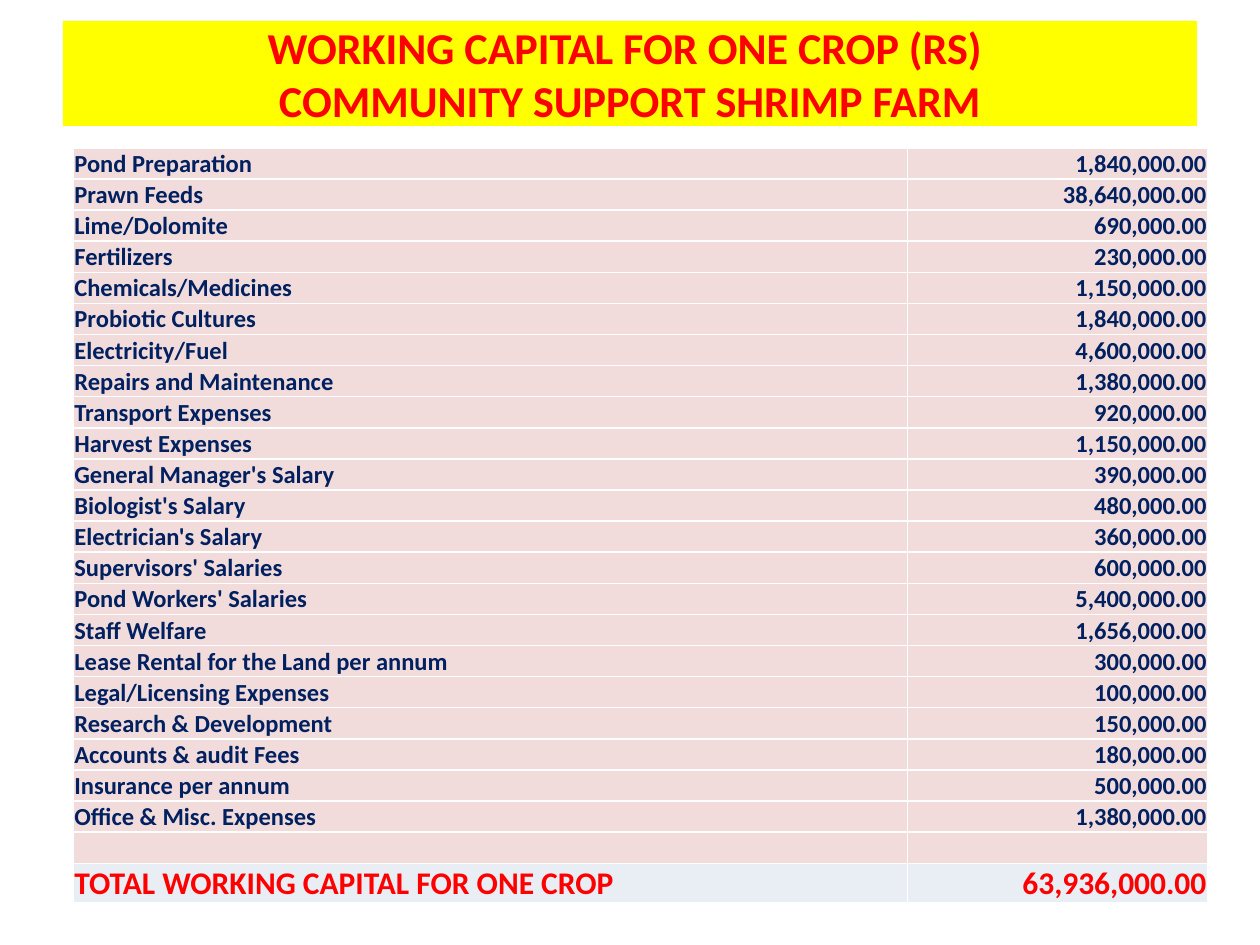
from lxml.etree import SubElement
from pptx import Presentation
from pptx.dml.color import RGBColor
from pptx.enum.shapes import MSO_SHAPE as Shape
from pptx.enum.text import MSO_ANCHOR as Anchor, PP_ALIGN as Align
from pptx.oxml.ns import qn
from pptx.util import Pt

NAVY, RED, YELLOW = "002060", "FF0000", "FFFF00"
PINK, PALE_BLUE, WHITE = "F2DCDB", "E9EDF4", "FFFFFF"
ROW_HEIGHT, TOTAL_HEIGHT = 17.8, 22.4
COLUMN_WIDTHS = (476.5, 171.5)

EXPENSES = [
    ("Pond Preparation", "1,840,000.00"),
    ("Prawn Feeds", "38,640,000.00"),
    ("Lime/Dolomite", "690,000.00"),
    ("Fertilizers", "230,000.00"),
    ("Chemicals/Medicines", "1,150,000.00"),
    ("Probiotic Cultures", "1,840,000.00"),
    ("Electricity/Fuel", "4,600,000.00"),
    ("Repairs and Maintenance", "1,380,000.00"),
    ("Transport Expenses", "920,000.00"),
    ("Harvest Expenses", "1,150,000.00"),
    ("General Manager's Salary", "390,000.00"),
    ("Biologist's Salary", "480,000.00"),
    ("Electrician's Salary", "360,000.00"),
    ("Supervisors' Salaries", "600,000.00"),
    ("Pond Workers' Salaries", "5,400,000.00"),
    ("Staff Welfare", "1,656,000.00"),
    ("Lease Rental for the Land per annum", "300,000.00"),
    ("Legal/Licensing Expenses", "100,000.00"),
    ("Research & Development", "150,000.00"),
    ("Accounts & audit Fees", "180,000.00"),
    ("Insurance per annum", "500,000.00"),
    ("Office & Misc. Expenses", "1,380,000.00"),
]
TOTAL = ("TOTAL WORKING CAPITAL FOR ONE CROP", "63,936,000.00")


def set_fill(item, color):
    item.fill.solid()
    item.fill.fore_color.rgb = RGBColor.from_string(color)


def add_span(para, text, size, color):
    span = para.add_run()
    span.text = text
    span.font.name = "Calibri"
    span.font.size = Pt(size)
    span.font.bold = True
    span.font.color.rgb = RGBColor.from_string(color)


deck = Presentation()
deck.slide_width, deck.slide_height = Pt(720), Pt(540)
page = deck.slides.add_slide(deck.slide_layouts[6])

# Title band
title = page.shapes.add_shape(Shape.RECTANGLE, Pt(36), Pt(12), Pt(648), Pt(60))
title.shadow.inherit = False
set_fill(title, YELLOW)
title.line.fill.background()
frame = title.text_frame
frame.word_wrap = True
frame.vertical_anchor = Anchor.MIDDLE
frame.margin_top = frame.margin_bottom = 0
para = frame.paragraphs[0]
para.alignment = Align.CENTER
add_span(para, "WORKING CAPITAL FOR ONE CROP (RS) ", 25.2, RED)
para.add_line_break()
add_span(para, "COMMUNITY SUPPORT SHRIMP FARM", 25.2, RED)

# Cost table: expenses, an empty spacer row, then the total
rows = EXPENSES + [("", ""), TOTAL]
table = page.shapes.add_table(
    len(rows), 2, Pt(42), Pt(84.5), Pt(sum(COLUMN_WIDTHS)),
    Pt(ROW_HEIGHT * (len(rows) - 1) + TOTAL_HEIGHT)).table
table.first_row = table.horz_banding = False
for column, width in zip(table.columns, COLUMN_WIDTHS):
    column.width = Pt(width)

for row, texts in zip(table.rows, rows):
    is_total = texts == TOTAL
    row.height = Pt(TOTAL_HEIGHT if is_total else ROW_HEIGHT)
    size, color = (18, RED) if is_total else (14, NAVY)
    for cell, text, align in zip(row.cells, texts, (Align.LEFT, Align.RIGHT)):
        cell.vertical_anchor = Anchor.BOTTOM
        cell.margin_left = cell.margin_right = cell.margin_top = Pt(0.5)
        cell.margin_bottom = 0
        para = cell.text_frame.paragraphs[0]
        para.alignment = align
        if text:
            add_span(para, text, size, color)
        else:
            SubElement(para._p, qn("a:endParaRPr"), sz=str(size * 100))
        # Borders come before the fill in the cell properties
        properties = cell._tc.get_or_add_tcPr()
        for side in ("a:lnL", "a:lnR", "a:lnT", "a:lnB"):
            border = SubElement(properties, qn(side), w=str(Pt(1)))
            solid = SubElement(border, qn("a:solidFill"))
            SubElement(solid, qn("a:srgbClr"), val=WHITE)
        set_fill(cell, PALE_BLUE if is_total else PINK)

deck.save("out.pptx")
